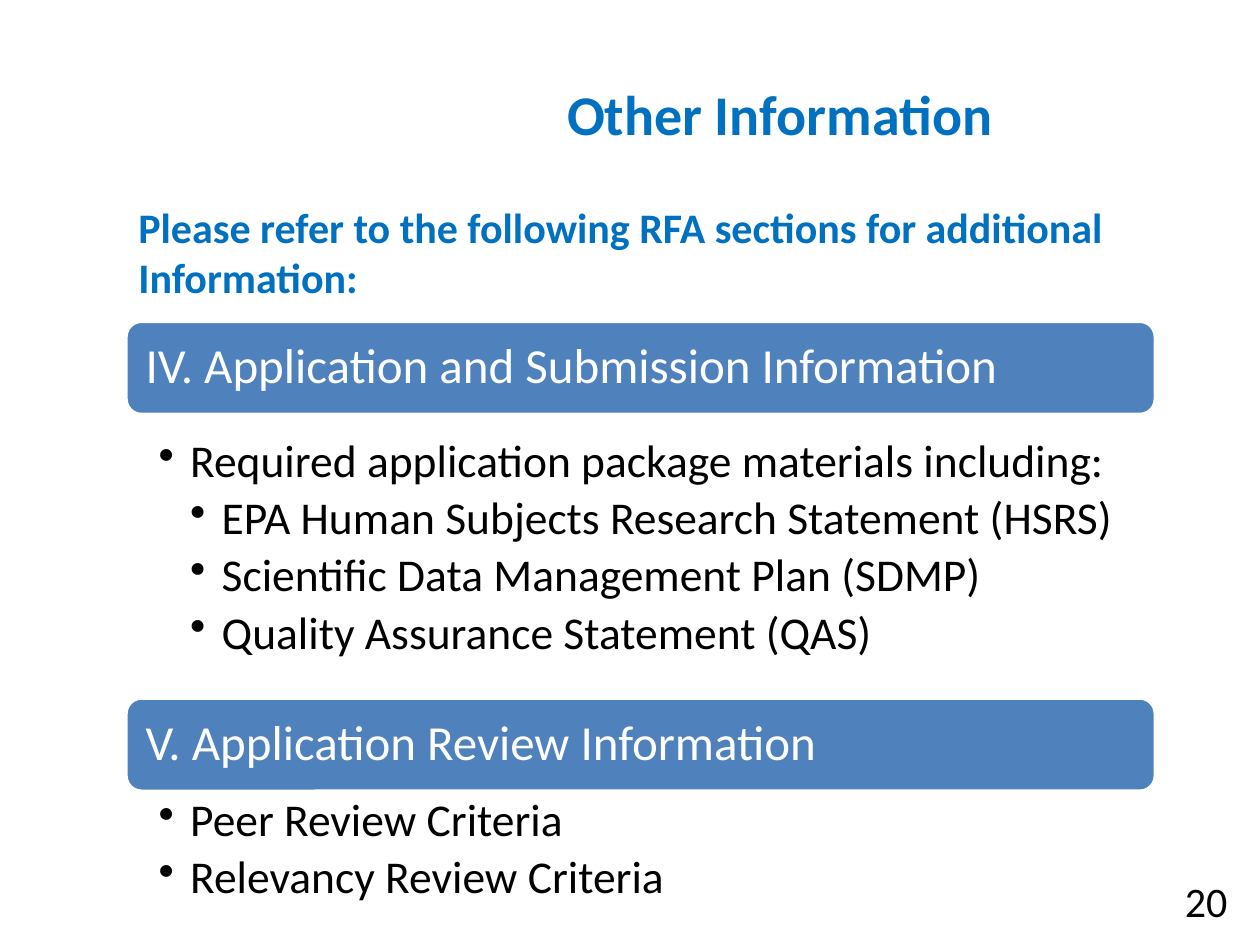
from lxml import etree
from pptx import Presentation
from pptx.dml.color import RGBColor
from pptx.enum import shapes, text
from pptx.oxml import ns
from pptx.util import Inches, Pt

FONT = "Calibri"
BLUE, BAR, WHITE, BLACK = "0070C0", "4F81BD", "FFFFFF", "000000"
LEFT, WIDTH, BAR_HEIGHT = 1, 8.17, 0.74
SECTIONS = [
    ("IV. Application and Submission Information", 2.55, 3.43, 1.98, [
        (1, "Required application package materials including:"),
        (2, "EPA Human Subjects Research Statement (HSRS)"),
        (2, "Scientific Data Management Plan (SDMP)"),
        (2, "Quality Assurance Statement (QAS)"),
    ]),
    ("V. Application Review Information", 5.54, 6.28, 0.99, [
        (1, "Peer Review Criteria"),
        (1, "Relevancy Review Criteria"),
    ]),
]


def color(value):
    return RGBColor.from_string(value)


def add_run(p, words, size, fill, bold=False):
    r = p.add_run()
    r.text = words
    r.font.name = FONT
    r.font.size = Pt(size)
    r.font.bold = bold
    r.font.color.rgb = color(fill)


def add_box(s, left, top, width, height, inset=(0.1, 0.05), anchor=text.MSO_ANCHOR.TOP):
    sp = s.shapes.add_textbox(Inches(left), Inches(top), Inches(width), Inches(height))
    tf = sp.text_frame
    tf.word_wrap = True
    tf.vertical_anchor = anchor
    tf.margin_left = tf.margin_right = Inches(inset[0])
    tf.margin_top = tf.margin_bottom = Inches(inset[1])
    return tf


def add_bullet(p, level):
    pPr = p._p.get_or_add_pPr()
    pPr.set("marL", str(Inches(0.25 * level)))
    pPr.set("indent", str(Inches(-0.25)))
    etree.SubElement(pPr, ns.qn("a:buChar")).set("char", "•")


def add_heading(s, words, top):
    sp = s.shapes.add_shape(shapes.MSO_SHAPE.ROUNDED_RECTANGLE, Inches(LEFT),
                            Inches(top), Inches(WIDTH), Inches(BAR_HEIGHT))
    sp.shadow.inherit = False
    sp.fill.solid()
    sp.fill.fore_color.rgb = color(BAR)
    sp.line.color.rgb = color(WHITE)
    sp.line.width = Pt(2)
    tf = sp.text_frame
    tf.word_wrap = True
    tf.vertical_anchor = text.MSO_ANCHOR.MIDDLE
    tf.margin_left = tf.margin_right = Inches(0.12)
    p = tf.paragraphs[0]
    p.alignment = text.PP_ALIGN.LEFT
    p.line_spacing = 0.9
    add_run(p, words, 28, WHITE)


def add_list(s, items, top, height):
    tf = add_box(s, LEFT, top, WIDTH, height, inset=(0.26, 0.05))
    for i, (level, words) in enumerate(items):
        p = tf.paragraphs[0] if i == 0 else tf.add_paragraph()
        add_bullet(p, level)
        p.level = level
        p.line_spacing = 0.9
        p.space_after = Pt(4.6)
        add_run(p, words, 26, BLACK)


def add_title(s, words):
    sp = s.shapes.title
    sp.left, sp.top, sp.width, sp.height = map(Inches, (4.4, 0.58, 5.26, 0.75))
    tf = sp.text_frame
    tf.word_wrap = True
    tf.vertical_anchor = text.MSO_ANCHOR.TOP
    p = tf.paragraphs[0]
    p.alignment = text.PP_ALIGN.LEFT
    add_run(p, words, 32, BLUE, bold=True)


def add_intro(s, words):
    tf = add_box(s, LEFT, 1.55, WIDTH, 0.91)
    add_run(tf.paragraphs[0], words, 24, BLUE, bold=True)


def add_page_number(s, number):
    tf = add_box(s, 7.17, 6.95, 2.67, 0.4, anchor=text.MSO_ANCHOR.MIDDLE)
    p = tf.paragraphs[0]
    p.alignment = text.PP_ALIGN.RIGHT
    add_run(p, number, 24, BLACK)


def main():
    prs = Presentation()
    prs.slide_width, prs.slide_height = Inches(10), Inches(7.5)
    s = prs.slides.add_slide(prs.slide_layouts.get_by_name("Title Only"))
    add_title(s, "Other Information")
    add_page_number(s, "20")
    for heading, top, list_top, list_height, items in SECTIONS:
        add_heading(s, heading, top)
        add_list(s, items, list_top, list_height)
    add_intro(s, "Please refer to the following RFA sections for additional Information:")
    prs.save("out.pptx")


if __name__ == "__main__":
    main()
